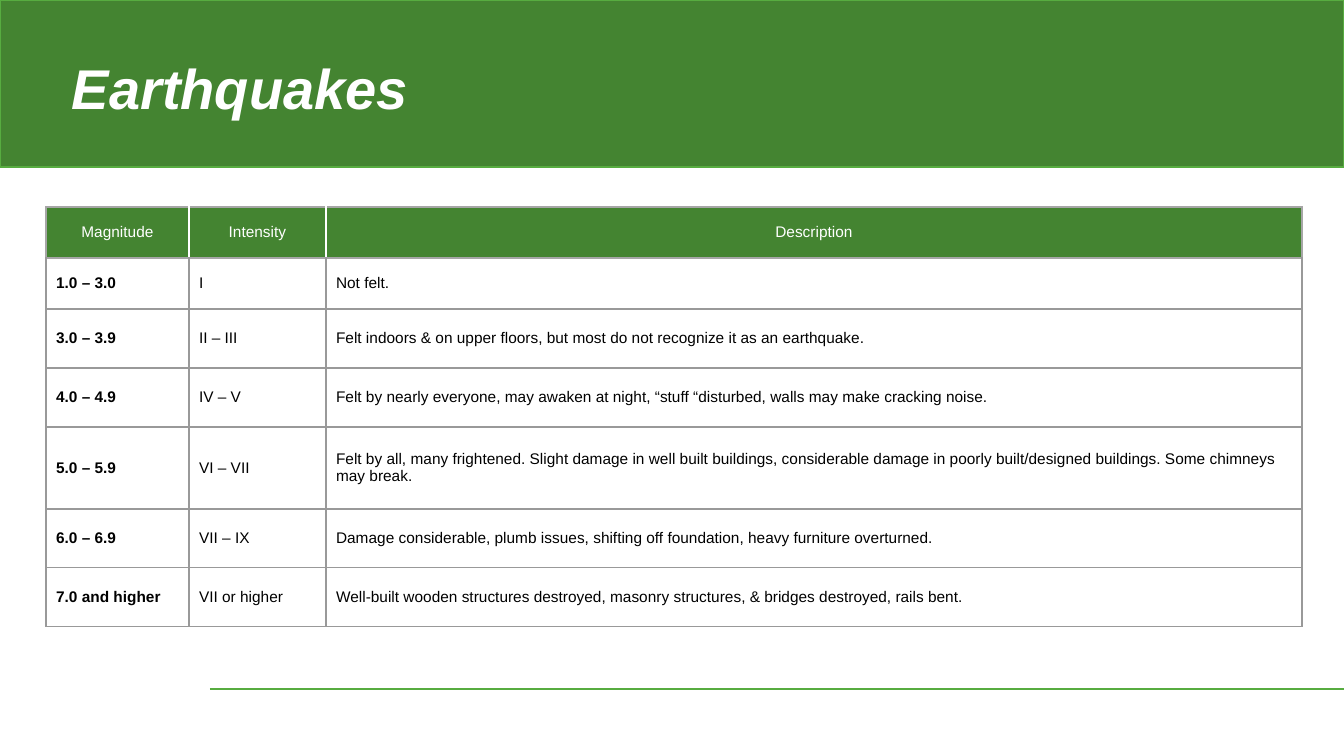
"""Build the Earthquakes slide: a title band above a magnitude and intensity table."""
import pptx
import pptx.dml.color
import pptx.enum.shapes
import pptx.enum.text
import pptx.oxml
import pptx.oxml.ns
import pptx.util

RGBColor = pptx.dml.color.RGBColor
BAND_GREEN = RGBColor(0x44, 0x84, 0x31)
LINE_GREEN = RGBColor(0x57, 0xAC, 0x40)
WHITE = RGBColor(0xFF, 0xFF, 0xFF)
BLACK = RGBColor(0x00, 0x00, 0x00)
HEADER_GRAY = RGBColor(0xA6, 0xA6, 0xA6)
BODY_GRAY = RGBColor(0x99, 0x99, 0x99)
MIDDLE = pptx.enum.text.MSO_ANCHOR.MIDDLE

COLUMN_WIDTHS = [143, 137, 976]
ROW_HEIGHTS = [51, 51, 59, 59, 82, 59, 59]
ROWS = [
    ("Magnitude", "Intensity", "Description"),
    ("1.0 – 3.0", "I", "Not felt."),
    ("3.0 – 3.9", "II – III",
     "Felt indoors & on upper floors, but most do not recognize it as an earthquake."),
    ("4.0 – 4.9", "IV – V",
     "Felt by nearly everyone, may awaken at night, “stuff “disturbed, walls may make cracking noise."),
    ("5.0 – 5.9", "VI – VII",
     "Felt by all, many frightened. Slight damage in well built buildings, considerable damage in "
     "poorly built/designed buildings. Some chimneys may break."),
    ("6.0 – 6.9", "VII – IX",
     "Damage considerable, plumb issues, shifting off foundation, heavy furniture overturned."),
    ("7.0 and higher", "VII or higher",
     "Well-built wooden structures destroyed, masonry structures, & bridges destroyed, rails bent."),
]


def px(length):
    return round(length * 914400 / 100.8)


def set_borders(cell, colors):
    properties = cell._tc.get_or_add_tcPr()
    for index, (side, color) in enumerate(zip("LRTB", colors)):
        properties.insert(index, pptx.oxml.parse_xml(
            f'<a:ln{side} {pptx.oxml.ns.nsdecls("a")} w="12700"><a:solidFill>'
            f'<a:srgbClr val="{color}"/></a:solidFill></a:ln{side}>'))


presentation = pptx.Presentation()
presentation.slide_width = px(1344)
presentation.slide_height = px(756)
slide = presentation.slides.add_slide(presentation.slide_layouts[6])

band = slide.shapes.add_shape(
    pptx.enum.shapes.MSO_SHAPE.RECTANGLE, 0, 0, px(1344), px(167))
band.shadow.inherit = False
band.fill.solid()
band.fill.fore_color.rgb = BAND_GREEN
band.line.color.rgb = LINE_GREEN
band.line.width = pptx.util.Pt(1)

footer_line = slide.shapes.add_connector(
    pptx.enum.shapes.MSO_CONNECTOR.STRAIGHT, px(210), px(689), px(1344), px(689))
footer_line.line.color.rgb = LINE_GREEN
footer_line.line.width = pptx.util.Pt(2)
footer_line._element.spPr.append(
    pptx.oxml.parse_xml(f'<a:effectLst {pptx.oxml.ns.nsdecls("a")}/>'))

title = slide.shapes.add_textbox(px(46), px(35), px(854), px(112))
title.text_frame.word_wrap = True
title.text_frame.vertical_anchor = MIDDLE
title.text_frame.margin_left = px(26)
title.text_frame.text = "Earthquakes"
paragraph = title.text_frame.paragraphs[0]
paragraph.line_spacing = 0.9
font = paragraph.runs[0].font
font.name = "Arial"
font.size = pptx.util.Pt(40)
font.bold = True
font.italic = True
font.color.rgb = WHITE

table = slide.shapes.add_table(
    len(ROWS), len(COLUMN_WIDTHS), px(46), px(207),
    px(sum(COLUMN_WIDTHS)), px(sum(ROW_HEIGHTS))).table
table.first_row = False
table.horz_banding = False
for column, width in zip(table.columns, COLUMN_WIDTHS):
    column.width = px(width)
for row, height in zip(table.rows, ROW_HEIGHTS):
    row.height = px(height)

for row_index, texts in enumerate(ROWS):
    is_header = row_index == 0
    for column_index, text in enumerate(texts):
        cell = table.cell(row_index, column_index)
        cell.vertical_anchor = MIDDLE
        cell.fill.solid()
        cell.fill.fore_color.rgb = BAND_GREEN if is_header else WHITE
        if is_header:
            left = HEADER_GRAY if column_index == 0 else WHITE
            right = HEADER_GRAY if column_index == len(texts) - 1 else WHITE
            set_borders(cell, [left, right, HEADER_GRAY, HEADER_GRAY])
        else:
            top = HEADER_GRAY if row_index == 1 else BODY_GRAY
            set_borders(cell, [BODY_GRAY, BODY_GRAY, top, BODY_GRAY])
        cell.text_frame.text = text
        paragraph = cell.text_frame.paragraphs[0]
        if is_header:
            paragraph.alignment = pptx.enum.text.PP_ALIGN.CENTER
        font = paragraph.runs[0].font
        font.name = "Arial"
        font.size = pptx.util.Pt(11)
        font.bold = column_index == 0 and not is_header
        font.color.rgb = WHITE if is_header else BLACK

presentation.save("out.pptx")
